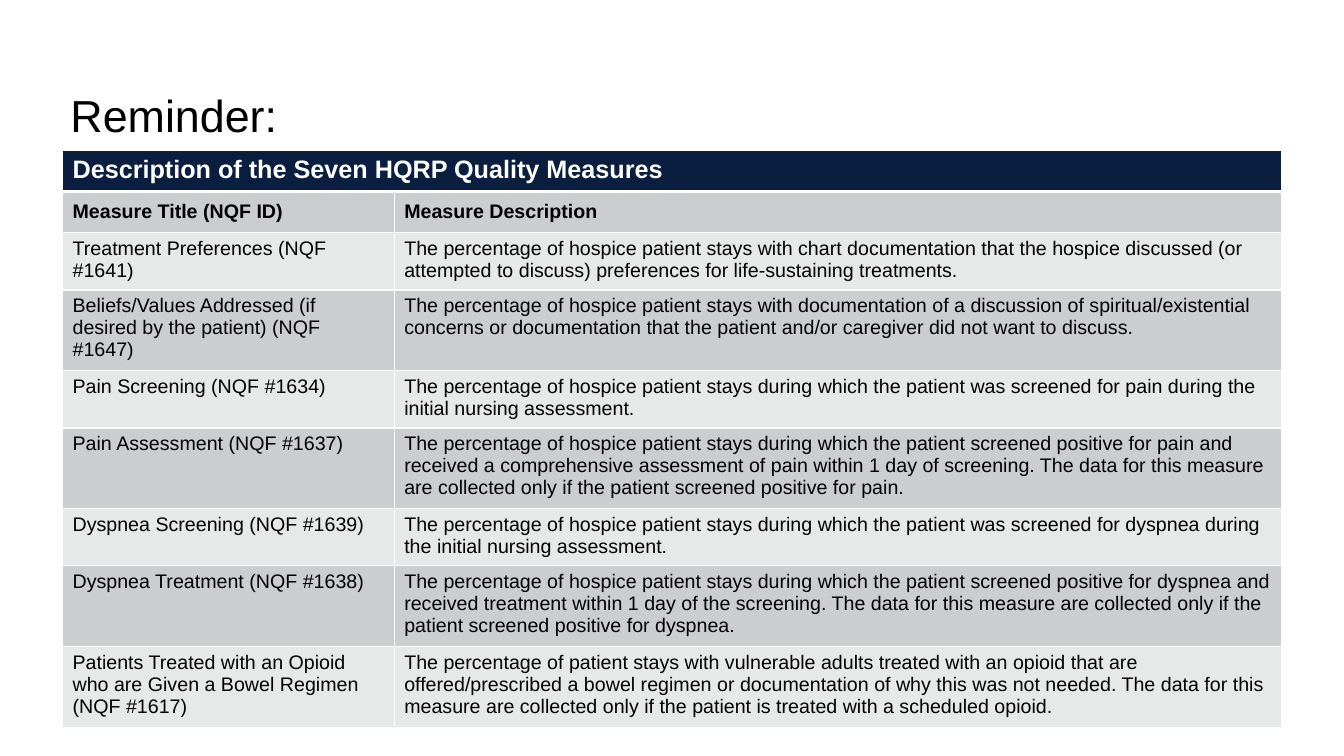
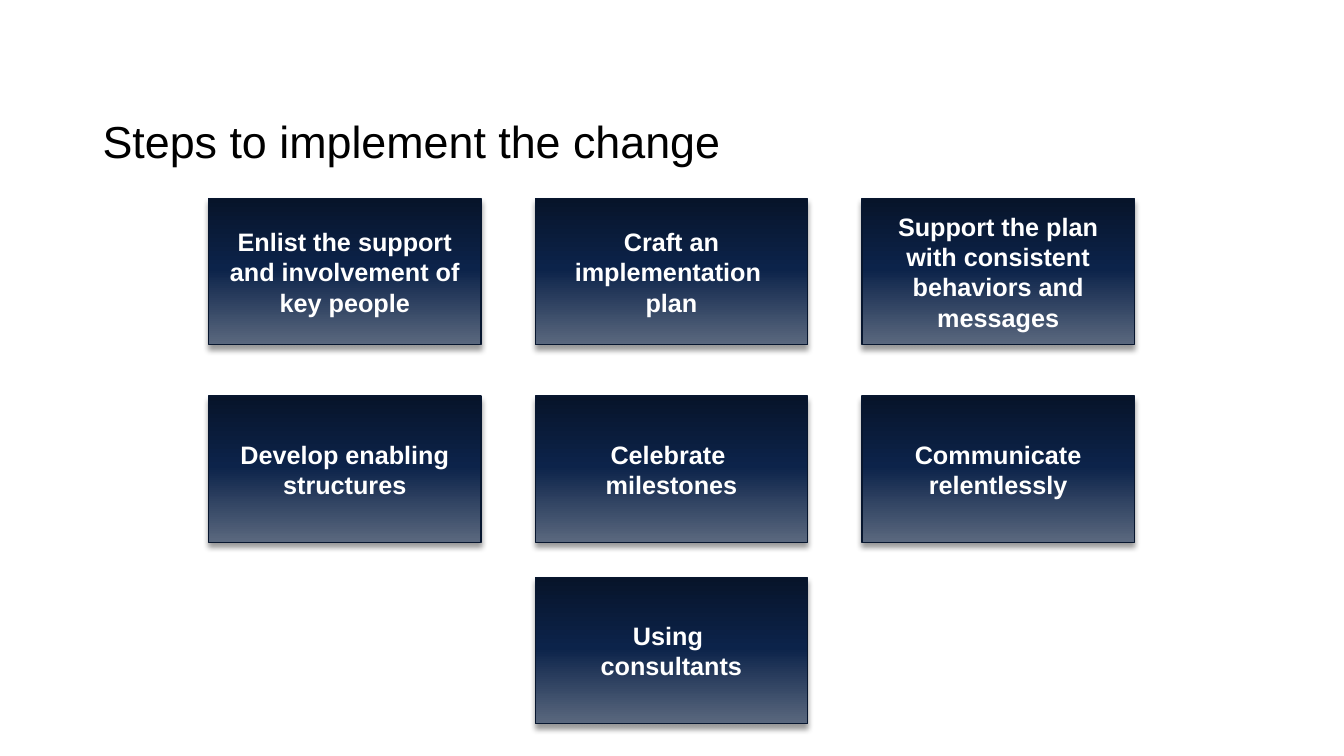
from lxml.etree import SubElement
from pptx import Presentation
from pptx.dml.color import RGBColor
from pptx.enum.shapes import MSO_SHAPE
from pptx.enum.text import MSO_ANCHOR, PP_ALIGN
from pptx.oxml.ns import qn
from pptx.util import Inches, Pt

RECT = MSO_SHAPE.RECTANGLE
MIDDLE, TOP = MSO_ANCHOR.MIDDLE, MSO_ANCHOR.TOP
LEFT, CENTER = PP_ALIGN.LEFT, PP_ALIGN.CENTER

# Shared look
FONT = "Arial"
BLACK, WHITE = "000000", "FFFFFF"
NAVY, EDGE = "0A1E3F", "07162F"
DARK, LIGHT = "CCCDCF", "E7E8E8"
FADE = ((0, "07142A"), (48, "0C234A"), (100, "5A687E"))

# Measure table
HEADING = "Description of the Seven HQRP Quality Measures"
LABELS = ("Measure Title (NQF ID)", "Measure Description")
STAYS = "The percentage of hospice patient stays "
DURING = STAYS + "during which the patient "
ONLY = "The data for this measure are collected only if the patient "
MEASURES = (
    ("Treatment Preferences (NQF #1641)",
     STAYS + "with chart documentation that the hospice discussed (or attempted "
     "to discuss) preferences for life-sustaining treatments."),
    ("Beliefs/Values Addressed (if desired by the patient) (NQF #1647)",
     STAYS + "with documentation of a discussion of spiritual/existential concerns "
     "or documentation that the patient and/or caregiver did not want to discuss."),
    ("Pain Screening (NQF #1634)",
     DURING + "was screened for pain during the initial nursing assessment."),
    ("Pain Assessment (NQF #1637)",
     DURING + "screened positive for pain and received a comprehensive assessment "
     "of pain within 1 day of screening. " + ONLY + "screened positive for pain."),
    ("Dyspnea Screening (NQF #1639)",
     DURING + "was screened for dyspnea during the initial nursing assessment."),
    ("Dyspnea Treatment (NQF #1638)",
     DURING + "screened positive for dyspnea and received treatment within 1 day "
     "of the screening. " + ONLY + "screened positive for dyspnea."),
    ("Patients Treated with an Opioid who are Given a Bowel Regimen (NQF #1617)",
     "The percentage of patient stays with vulnerable adults treated with an opioid "
     "that are offered/prescribed a bowel regimen or documentation of why this was "
     "not needed. " + ONLY + "is treated with a scheduled opioid."),
)
WIDTHS = (3.29, 8.8)
HEIGHTS = (0.41, 0.41, 0.54, 0.75, 0.54, 0.75, 0.54, 0.75, 0.75)

# Step boxes: row top, then the text by column
STEPS = (
    (1.97, ("Enlist the support and involvement of key people",
            "Craft an implementation \nplan",
            "Support the plan with consistent behaviors and messages")),
    (3.93, ("Develop enabling structures", "Celebrate \nmilestones",
            "Communicate relentlessly")),
    (5.73, (None, "Using \nconsultants", None)),
)


def color(code):
    return RGBColor.from_string(code)


def write(frame, text, size, ink, bold=False, align=LEFT):
    para = frame.paragraphs[0]
    para.text = text
    para.alignment = align
    font = para.font
    font.name, font.size, font.bold = FONT, Pt(size), bold
    font.color.rgb = color(ink)
    return para


def add_title(slide, text, *place):
    frame = slide.shapes.add_textbox(*map(Inches, place)).text_frame
    frame.word_wrap = True
    frame.vertical_anchor = MIDDLE
    write(frame, text, 32, BLACK).line_spacing = 0.9


def add_color(parent, code):
    return SubElement(parent, qn("a:srgbClr"), val=code)


def set_edges(cell, **widths):
    """Draw white borders; widths in points override the usual 1."""
    props = cell._tc.get_or_add_tcPr()
    for place, side in enumerate("LRTB"):
        line = SubElement(props, qn("a:ln" + side),
                          w=str(Pt(widths.get(side, 1))))
        add_color(SubElement(line, qn("a:solidFill")), WHITE)
        props.insert(place, line)


def fill_cell(cell, text, back, size=14, ink=BLACK, bold=False,
              anchor=TOP, **edges):
    cell.fill.solid()
    cell.fill.fore_color.rgb = color(back)
    cell.vertical_anchor = anchor
    write(cell.text_frame, text, size, ink, bold)
    set_edges(cell, **edges)


def add_measures(slide):
    table = slide.shapes.add_table(
        len(HEIGHTS), len(WIDTHS), Inches(0.62), Inches(1.49),
        Inches(sum(WIDTHS)), Inches(sum(HEIGHTS))).table
    table.first_row = table.horz_banding = False
    for col, width in zip(table.columns, WIDTHS):
        col.width = Inches(width)
    for row, height in zip(table.rows, HEIGHTS):
        row.height = Inches(height)

    # Heading across both columns, then column labels
    head = table.cell(0, 0)
    head.merge(table.cell(0, 1))
    fill_cell(head, HEADING, NAVY, 18, WHITE, True, B=3)
    for col, text in enumerate(LABELS):
        fill_cell(table.cell(1, col), text, DARK, bold=True,
                  anchor=MIDDLE, T=3)

    # Banded body
    for row, texts in enumerate(MEASURES, 2):
        for col, text in enumerate(texts):
            fill_cell(table.cell(row, col), text, DARK if row % 2 else LIGHT)


def add_fade(shape):
    shape.fill.gradient()
    shape.fill.gradient_angle = 270
    stops = shape._element.spPr.find(".//" + qn("a:gsLst"))
    stops.clear()
    for spot, code in FADE:
        add_color(SubElement(stops, qn("a:gs"), pos=str(spot * 1000)), code)


def add_shadow(shape):
    shape.shadow.inherit = False
    effects = shape._element.spPr.find(qn("a:effectLst"))
    shade = SubElement(effects, qn("a:outerShdw"), blurRad=str(Pt(4)),
                       dist=str(Pt(3)), dir="5400000", rotWithShape="0")
    SubElement(add_color(shade, BLACK), qn("a:alpha"), val="40000")


def add_step(slide, text, left, top):
    box = slide.shapes.add_shape(RECT, Inches(left), Inches(top),
                                 Inches(2.7), Inches(1.45))
    add_fade(box)
    box.line.color.rgb = color(EDGE)
    box.line.width = Pt(1)
    add_shadow(box)
    frame = box.text_frame
    frame.word_wrap = True
    frame.vertical_anchor = MIDDLE
    write(frame, text, 18, WHITE, True, CENTER)


def main():
    deck = Presentation()
    deck.slide_width, deck.slide_height = Inches(13.33), Inches(7.5)
    blank = deck.slide_layouts[6]

    # Quality measures
    slide = deck.slides.add_slide(blank)
    add_title(slide, "Reminder:", 0.6, 0.83, 12.42, 0.69)
    add_measures(slide)

    # Steps of change
    slide = deck.slides.add_slide(blank)
    add_title(slide, "Steps to implement the change", 0.92, 1.01, 11.5, 0.84)
    for top, texts in STEPS:
        for col, text in enumerate(texts):
            if text:
                add_step(slide, text, 2.07 + 3.24 * col, top)

    deck.save("out.pptx")


if __name__ == "__main__":
    main()
